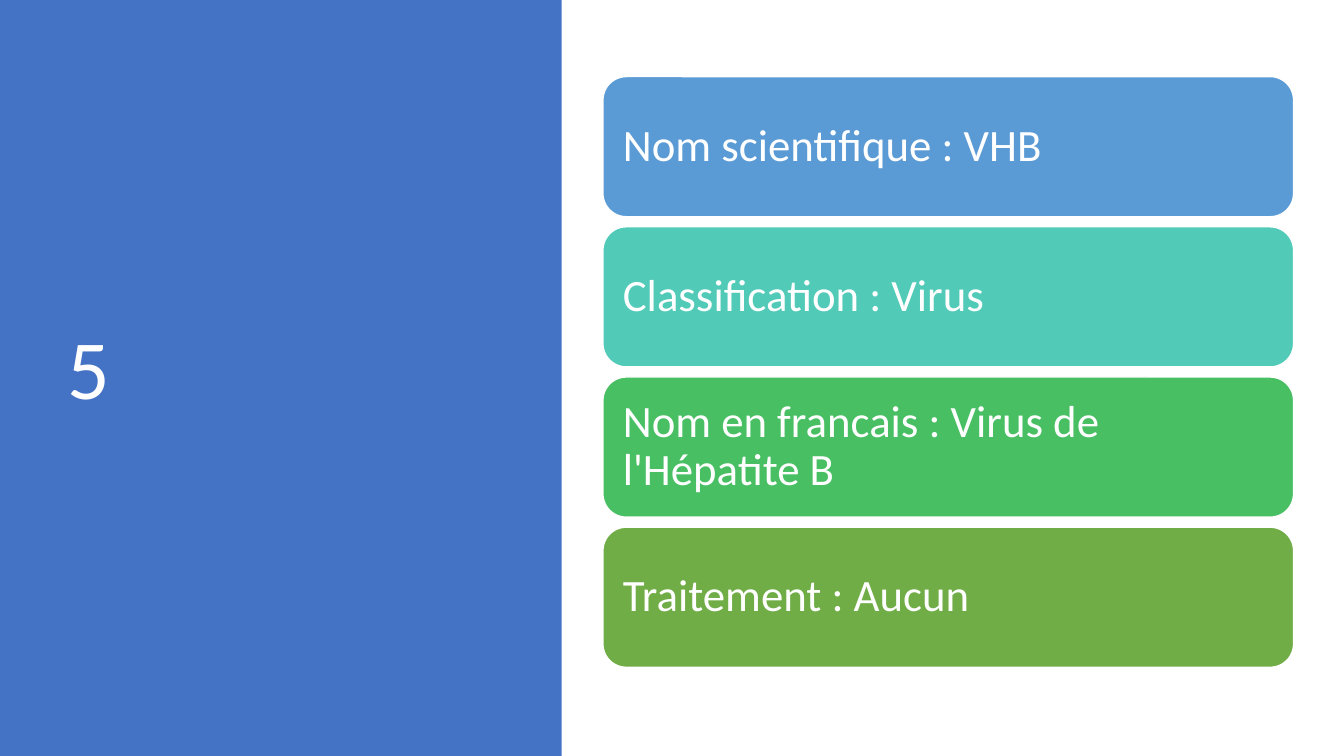
"""Builds the slide on the hepatitis B virus: a numbered panel and four fact cards."""
from pptx import Presentation
from pptx.dml.color import RGBColor
from pptx.enum.shapes import MSO_SHAPE
from pptx.enum.text import MSO_ANCHOR, PP_ALIGN
from pptx.util import Inches, Pt

RECTANGLE = MSO_SHAPE.RECTANGLE
ROUNDED = MSO_SHAPE.ROUNDED_RECTANGLE
MIDDLE = MSO_ANCHOR.MIDDLE
LEFT = PP_ALIGN.LEFT

WHITE = RGBColor(0xFF, 0xFF, 0xFF)
PANEL_BLUE = RGBColor(0x44, 0x72, 0xC4)
SKY = RGBColor(0x5B, 0x9B, 0xD5)
TEAL = RGBColor(0x52, 0xCA, 0xB8)
GREEN = RGBColor(0x49, 0xBF, 0x64)
OLIVE = RGBColor(0x70, 0xAD, 0x47)

FACTS = [
    ("Nom scientifique : VHB", SKY),
    ("Classification : Virus", TEAL),
    ("Nom en francais : Virus de l'Hépatite B", GREEN),
    ("Traitement : Aucun", OLIVE),
]
CARD_TOP = 0.76
CARD_PITCH = 1.49


def write_text(shape, text, size, color=WHITE, font="Calibri", inset=None):
    frame = shape.text_frame
    frame.word_wrap = True
    frame.vertical_anchor = MIDDLE
    if inset is not None:
        frame.margin_left = frame.margin_right = Inches(inset)
        frame.margin_top = frame.margin_bottom = Inches(inset)
    paragraph = frame.paragraphs[0]
    paragraph.alignment = LEFT
    paragraph.line_spacing = 0.9
    run = paragraph.add_run()
    run.text = text
    run.font.name = font
    run.font.size = Pt(size)
    run.font.color.rgb = color


class SlideBuilder:
    def __init__(self, slide, title_size=60, card_size=32):
        self.slide = slide
        self.title_size = title_size
        self.card_size = card_size

    def block(self, kind, left, top, width, height, fill, line=None):
        shape = self.slide.shapes.add_shape(
            kind, Inches(left), Inches(top), Inches(width), Inches(height))
        shape.shadow.inherit = False
        shape.fill.solid()
        shape.fill.fore_color.rgb = fill
        if line is None:
            shape.line.fill.background()
        else:
            shape.line.color.rgb = line
            shape.line.width = Pt(1)
        return shape

    def title(self, text, left, top, width, height):
        box = self.slide.shapes.add_textbox(
            Inches(left), Inches(top), Inches(width), Inches(height))
        write_text(box, text, self.title_size)

    def card(self, text, top, fill):
        shape = self.block(ROUNDED, 5.98, top, 6.85, 1.39, fill, line=WHITE)
        write_text(shape, text, self.card_size, inset=0.13)


def main():
    presentation = Presentation()
    presentation.slide_width = Inches(13.33)
    presentation.slide_height = Inches(7.5)
    slide = presentation.slides.add_slide(presentation.slide_layouts[6])
    builder = SlideBuilder(slide)
    builder.block(RECTANGLE, 0, 0, 5.57, 7.5, PANEL_BLUE)
    builder.title("5", 0.57, 0.68, 4.16, 6.02)
    for index, (text, fill) in enumerate(FACTS):
        builder.card(text, CARD_TOP + index * CARD_PITCH, fill)
    presentation.save("out.pptx")


if __name__ == "__main__":
    main()
